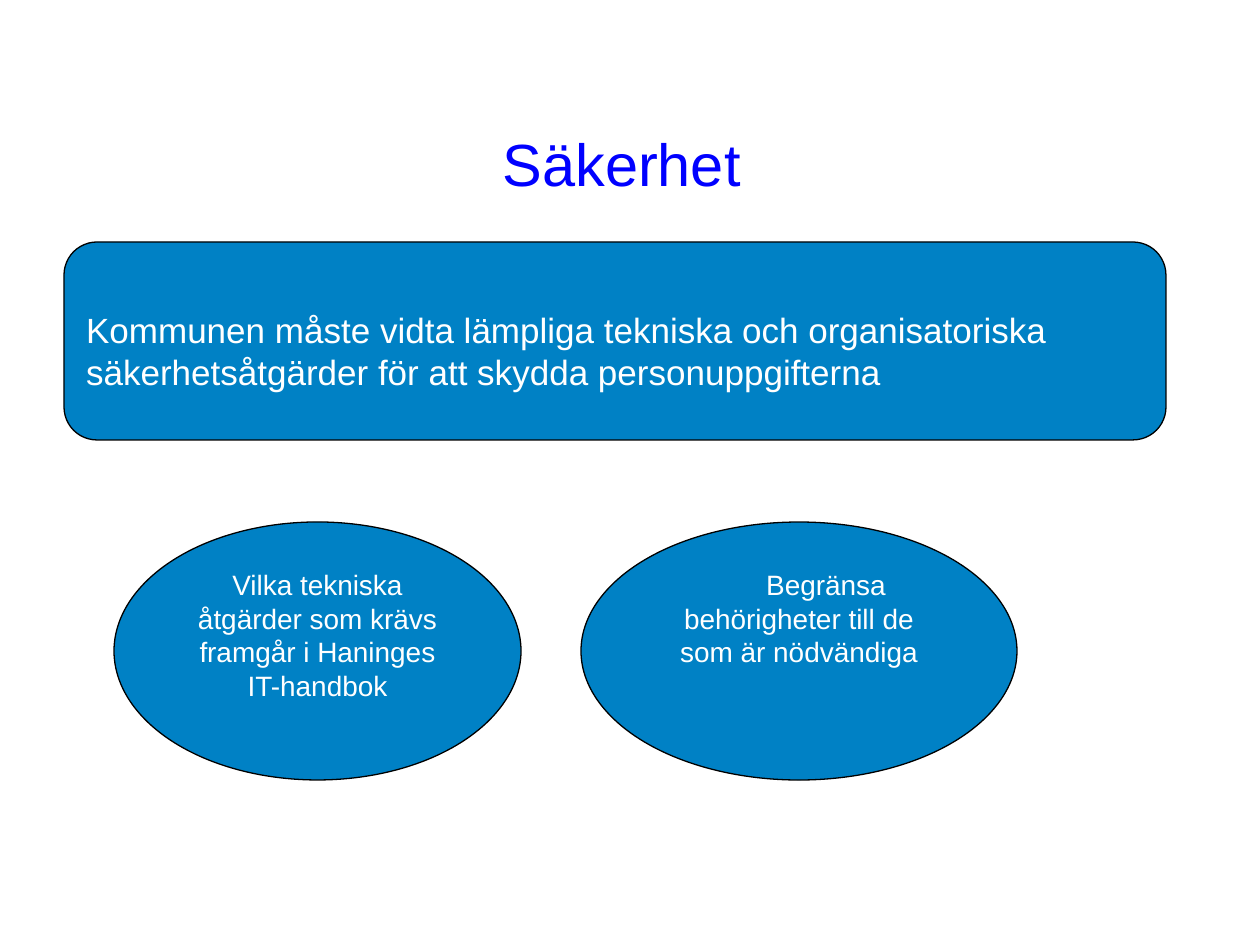
import pptx
import pptx.util
import pptx.dml.color
import pptx.enum.shapes
import pptx.enum.text

HUES = {"blue": "0000FF", "fill": "0081C5", "line": "000000", "text": "FFFFFF"}
KIND = pptx.enum.shapes.MSO_SHAPE
SIDE = pptx.enum.text.PP_ALIGN
EDGE = pptx.enum.text.MSO_ANCHOR


def px(n):
    return pptx.util.Emu(round(n * 914400 / 126))


def write(par, text, size, hue, side):
    par.alignment = side
    run = par.add_run()
    run.text = text
    run.font.name = "Arial"
    run.font.size = pptx.util.Pt(size)
    run.font.color.rgb = pptx.dml.color.RGBColor.from_string(HUES[hue])


deck = pptx.Presentation()
deck.slide_width, deck.slide_height = px(1260), px(945)
slide = deck.slides.add_slide(deck.slide_layouts[5])

title = slide.shapes.title
title.left, title.top, title.width, title.height = px(94), px(84), px(1072), px(158)
title.text_frame.vertical_anchor = EDGE.MIDDLE
write(title.text_frame.paragraphs[0], "Säkerhet ", 34, "blue", SIDE.CENTER)

items = [
    (KIND.ROUNDED_RECTANGLE, (64, 242, 1102, 198), 57, 0, 20, SIDE.LEFT,
     "Kommunen måste vidta lämpliga tekniska och organisatoriska "
     "säkerhetsåtgärder för att skydda personuppgifterna"),
    (KIND.OVAL, (114, 522, 407, 258), 8, 0, 16, SIDE.CENTER,
     "Vilka tekniska åtgärder som krävs framgår i Haninges IT-handbok"),
    (KIND.OVAL, (581, 522, 436, 258), 8, 54, 16, SIDE.CENTER,
     "Begränsa behörigheter till de som är nödvändiga"),
]

for kind, place, inset, indent, size, side, text in items:
    shape = slide.shapes.add_shape(kind, *map(px, place))
    shape.shadow.inherit = False
    shape.fill.solid()
    shape.fill.fore_color.rgb = pptx.dml.color.RGBColor.from_string(HUES["fill"])
    shape.line.color.rgb = pptx.dml.color.RGBColor.from_string(HUES["line"])
    shape.line.width = pptx.util.Pt(0.75)
    frame = shape.text_frame
    frame.word_wrap = True
    frame.vertical_anchor = EDGE.TOP
    frame.margin_top = px(inset)
    par = frame.paragraphs[0]
    if indent:
        props = par._p.get_or_add_pPr()
        props.set("marL", "0")
        props.set("indent", str(px(indent)))
    write(par, text, size, "text", side)

deck.save("out.pptx")
